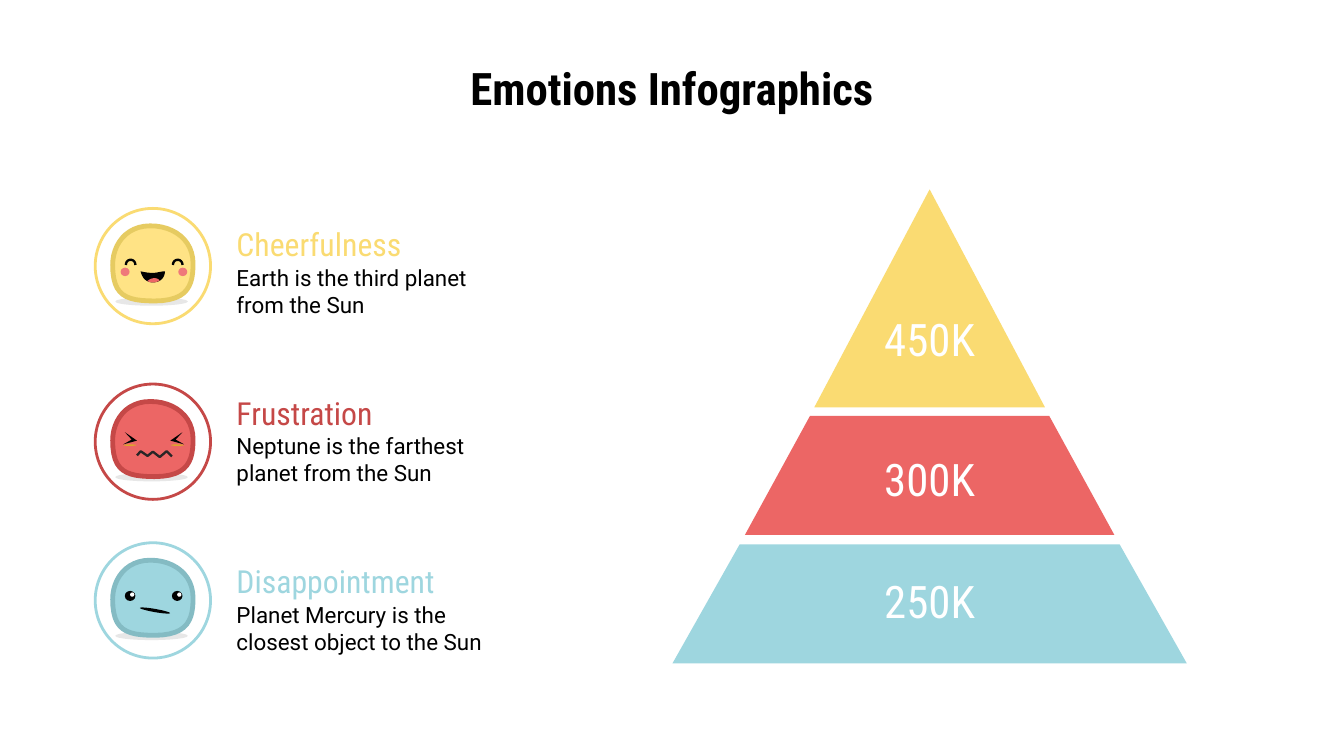
from dataclasses import dataclass

from pptx import Presentation
from pptx.dml.color import RGBColor
from pptx.enum.shapes import MSO_SHAPE
from pptx.enum.text import MSO_ANCHOR, PP_ALIGN
from pptx.util import Cm, Pt

Point = tuple[float, float]

YELLOW, RED, BLUE = "FADB72", "EC6665", "9ED6DF"
BLACK, WHITE, INK = "000000", "FFFFFF", "010202"
CONDENSED = "Roboto Condensed"
BADGE_X, BADGE_SIZE = 1.8, 2.18
EYE_GAP = 0.89
FACE_MIRROR = 2.21


@dataclass
class Oval:
    x: float
    y: float
    w: float
    h: float
    color: str
    rot: float = 0


@dataclass
class Outline:
    points: list[Point]
    fill: str | None = None
    line: str | None = None
    width: float = 0


@dataclass
class Emotion:
    name: str
    text: str
    color: str
    badge_y: float
    skin: str
    edge: str
    features: list[Oval | Outline]


@dataclass
class Tier:
    label: str
    color: str
    top: float
    bottom: float
    half_top: float
    half_bottom: float
    label_y: float


def bezier(start: Point, *curves: tuple[Point, Point, Point], steps: int = 12) -> list[Point]:
    points = [start]
    for a, b, end in curves:
        first = points[-1]
        for i in range(1, steps + 1):
            t = i / steps
            u = 1 - t
            weights = (u**3, 3 * u * u * t, 3 * u * t * t, t**3)
            corners = (first, a, b, end)
            points.append((sum(k * c[0] for k, c in zip(weights, corners)),
                           sum(k * c[1] for k, c in zip(weights, corners))))
    return points


def shift(points: list[Point], dx: float) -> list[Point]:
    return [(x + dx, y) for x, y in points]


def mirror(points: list[Point]) -> list[Point]:
    return [(FACE_MIRROR - x, y) for x, y in points]


def paint(color: str) -> RGBColor:
    return RGBColor.from_string(color)


def style(sp, fill: str | None, line: str | None = None, width: float = 0) -> None:
    sp.shadow.inherit = False
    if fill:
        sp.fill.solid()
        sp.fill.fore_color.rgb = paint(fill)
    else:
        sp.fill.background()
    if line:
        sp.line.color.rgb = paint(line)
        sp.line.width = Pt(width)
    else:
        sp.line.fill.background()


def add_oval(s, o: Oval, dx: float = 0, dy: float = 0, line: str | None = None) -> None:
    sp = s.shapes.add_shape(MSO_SHAPE.OVAL, Cm(o.x + dx), Cm(o.y + dy), Cm(o.w), Cm(o.h))
    sp.rotation = o.rot
    style(sp, o.color, line, 1.5)


def add_outline(s, o: Outline, dx: float = 0, dy: float = 0) -> None:
    points = [(Cm(x + dx), Cm(y + dy)) for x, y in o.points]
    builder = s.shapes.build_freeform(*points[0])
    builder.add_line_segments(points[1:], close=o.fill is not None)
    style(builder.convert_to_shape(), o.fill, o.line, o.width)


def add_text(s, text: str, x: float, y: float, w: float, h: float, *, size: float,
             color: str = BLACK, font: str = CONDENSED, bold: bool = False,
             align: PP_ALIGN = PP_ALIGN.LEFT) -> None:
    tf = s.shapes.add_textbox(Cm(x), Cm(y), Cm(w), Cm(h)).text_frame
    tf.word_wrap = True
    tf.vertical_anchor = MSO_ANCHOR.MIDDLE
    tf.margin_left = tf.margin_right = tf.margin_top = tf.margin_bottom = Cm(0.25)
    p = tf.paragraphs[0]
    p.alignment = align
    r = p.add_run()
    r.text = text
    r.font.name = font
    r.font.size = Pt(size)
    r.font.bold = bold
    r.font.color.rgb = paint(color)


def add_emotion(s, e: Emotion, text_y: float) -> None:
    add_oval(s, Oval(BADGE_X, e.badge_y, BADGE_SIZE, BADGE_SIZE, WHITE), line=e.color)
    ground = Oval(0.38, 1.68, 1.37, 0.16, "E7E7E7")
    body = Outline(BODY, e.skin, e.edge, 2.57)
    for part in [ground, body, *e.features]:
        draw = add_oval if isinstance(part, Oval) else add_outline
        draw(s, part, BADGE_X, e.badge_y)
    add_text(s, e.name, 4.22, text_y, 5.66, 1.19, size=17, color=e.color)
    add_text(s, e.text, 4.22, text_y + 0.75, 5.66, 1.47, size=12, font="Roboto")


def add_tier(s, t: Tier, center: float = 17.57) -> None:
    add_outline(s, Outline([(center - t.half_top, t.top), (center + t.half_top, t.top),
                            (center + t.half_bottom, t.bottom),
                            (center - t.half_bottom, t.bottom)], t.color))
    add_text(s, t.label, center - 3.21, t.label_y, 6.42, 2.29, size=24, color=WHITE,
             align=PP_ALIGN.CENTER)


BODY = bezier((1.04, 0.33),
              ((0.58, 0.33), (0.33, 0.69), (0.33, 1.07)),
              ((0.33, 1.65), (0.58, 1.75), (1.12, 1.75)),
              ((1.78, 1.75), (1.85, 1.42), (1.85, 1.04)),
              ((1.85, 0.61), (1.5, 0.33), (1.04, 0.33)))
SMILE = bezier((0.86, 1.19),
               ((0.86, 1.19), (0.89, 1.4), (1.09, 1.4)),
               ((1.32, 1.4), (1.32, 1.19), (1.32, 1.19)),
               ((1.24, 1.19), (1.17, 1.22), (1.09, 1.22)),
               ((0.97, 1.22), (0.86, 1.19), (0.86, 1.19)))
TONGUE = bezier((1.12, 1.32),
                ((1.04, 1.32), (0.99, 1.37), (0.99, 1.37)),
                ((1.02, 1.4), (1.07, 1.4), (1.09, 1.4)),
                ((1.17, 1.4), (1.19, 1.37), (1.22, 1.37)),
                ((1.19, 1.32), (1.14, 1.32), (1.12, 1.32)))
HAPPY_EYE = bezier((0.58, 1.07), ((0.58, 0.94), (0.76, 0.94), (0.76, 1.07)))
SQUINT = [(0.56, 0.91), (0.79, 1.07), (0.53, 1.14), (0.69, 1.05)]
WAVE = [(0.79, 1.35), (0.86, 1.27), (0.99, 1.36), (1.09, 1.28),
        (1.22, 1.38), (1.35, 1.27), (1.45, 1.37)]

CHEERFUL = [Outline(SMILE, INK), Outline(TONGUE, RED)]
CHEERFUL += [Oval(x, 1.12, 0.17, 0.16, "EF797A") for x in (0.48, 1.57)]
CHEERFUL += [Outline(shift(HAPPY_EYE, dx), line=INK, width=1.25) for dx in (0, EYE_GAP)]

FRUSTRATED = [Oval(x, 1.14, 0.25, 0.03, "DDA62B") for x in (0.53, 1.43)]
FRUSTRATED += [Outline(eye, INK) for eye in (SQUINT, mirror(SQUINT))]
FRUSTRATED.append(Outline(WAVE, line="282526", width=1.25))

DISAPPOINTED = [Oval(0.84, 1.25, 0.58, 0.06, INK, 9.9)]
for gap in (0, EYE_GAP):
    DISAPPOINTED += [Oval(0.56 + gap, 0.91, 0.2, 0.19, INK),
                     Oval(0.66 + gap, 0.94, 0.08, 0.08, WHITE)]

EMOTIONS = [
    Emotion("Cheerfulness", "Earth is the third planet from the Sun",
            YELLOW, 3.94, "FFE385", "E6CB61", CHEERFUL),
    Emotion("Frustration", "Neptune is the farthest planet from the Sun",
            "C54847", 7.26, RED, "C54847", FRUSTRATED),
    Emotion("Disappointment", "Planet Mercury is the closest object to the Sun",
            BLUE, 10.26, BLUE, "84BBC3", DISAPPOINTED),
]
TIERS = [
    Tier("450K", YELLOW, 3.58, 7.7, 0, 2.18, 5.26),
    Tier("300K", RED, 7.86, 10.11, 2.26, 3.49, 7.9),
    Tier("250K", BLUE, 10.29, 12.54, 3.59, 4.86, 10.21),
]


def main() -> None:
    prs = Presentation()
    prs.slide_width, prs.slide_height = Cm(25.4), Cm(14.29)
    s = prs.slides.add_slide(prs.slide_layouts[6])
    add_text(s, "Emotions Infographics", 0.5, 0.86, 24.4, 1.6, size=24, bold=True,
             align=PP_ALIGN.CENTER)
    for t in TIERS:
        add_tier(s, t)
    for i, e in enumerate(EMOTIONS):
        add_emotion(s, e, 4.01 + 3.19 * i)
    prs.save("out.pptx")


if __name__ == "__main__":
    main()
